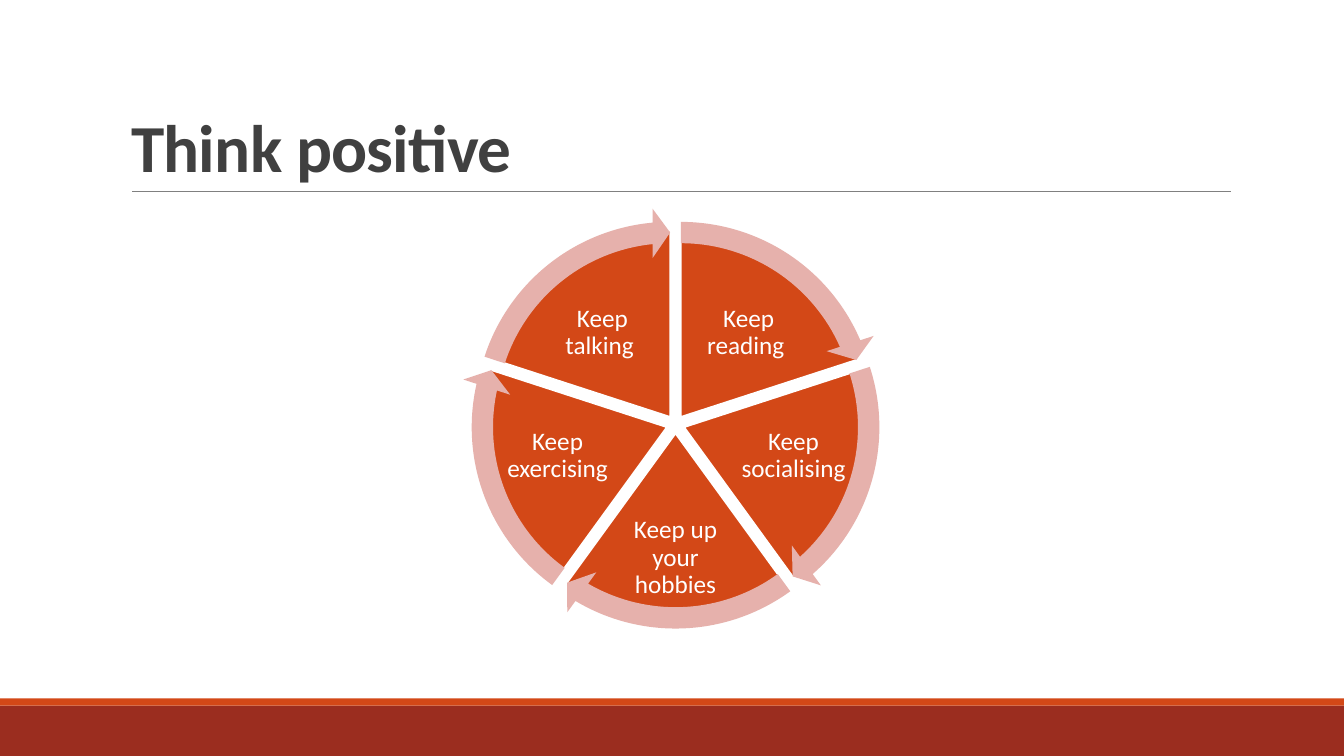
import math

from lxml import etree
from pptx import Presentation
from pptx import util as u
from pptx.dml.color import RGBColor
from pptx.enum import shapes, text
from pptx.oxml.ns import qn

ORANGE = RGBColor(0xD3, 0x48, 0x17)
BRICK = RGBColor(0x9B, 0x2D, 0x1F)
PINK = RGBColor(0xE6, 0xB1, 0xAC)
GREY = RGBColor(0x80, 0x80, 0x80)
DARK = RGBColor(0x40, 0x40, 0x40)
WHITE = RGBColor(0xFF, 0xFF, 0xFF)

CENTRE_X, CENTRE_Y, EXPLODE = 6.7, 4.21, 0.09
PIE_SIZE, ARROW_SIZE = 3.7, 4.15
FULL_TURN, TOP, STEP, SWEEP = 216, 162, 43.2, 39.92
LABELS = [
    ("Keep reading ", 6.83, 2.91, 1.19, 0.79),
    ("Keep socialising ", 7.32, 4.08, 1.1, 0.88),
    ("Keep up your hobbies", 6.17, 5.05, 1.06, 0.97),
    ("Keep exercising ", 4.98, 4.08, 1.1, 0.88),
    ("Keep talking ", 5.38, 2.91, 1.19, 0.79),
]


def set_attrs(obj, values):
    for name, value in values.items():
        setattr(obj, name, value)


def add_filled(s, kind, box, color, adjustments=(), outline=None):
    sp = s.shapes.add_shape(kind, *map(u.Inches, box))
    sp.shadow.inherit = False
    sp.fill.solid()
    sp.fill.fore_color.rgb = color
    if outline:
        sp.line.color.rgb = outline
        sp.line.width = u.Pt(1.25)
    else:
        sp.line.fill.background()
    for i, value in enumerate(adjustments):
        sp.adjustments[i] = value


def add_rule(s, x1, x2, y):
    line = s.shapes.add_connector(
        shapes.MSO_CONNECTOR.STRAIGHT, *map(u.Inches, (x1, y, x2, y)))
    line.line.color.rgb = GREY
    line.line.width = u.Pt(0.5)
    etree.SubElement(line._element.spPr, qn("a:effectLst"))


def write(sp, words, frame, paragraph, font, color):
    tf = sp.text_frame
    set_attrs(tf, {"word_wrap": True, "auto_size": text.MSO_AUTO_SIZE.NONE, **frame})
    p = tf.paragraphs[0]
    set_attrs(p, paragraph)
    r = p.add_run()
    r.text = words
    set_attrs(r.font, {"name": "Calibri", **font})
    r.font.color.rgb = color
    return r


def add_title(s, words):
    sp = s.shapes.title
    set_attrs(sp, dict(zip(("left", "top", "width", "height"),
                           map(u.Inches, (1.2, 0.31, 11, 1.59)))))
    r = write(sp, words, {"vertical_anchor": text.MSO_ANCHOR.BOTTOM},
              {"alignment": text.PP_ALIGN.LEFT, "line_spacing": 0.85},
              {"size": u.Pt(48), "bold": True}, DARK)
    r.font._element.set("spc", "-50")


def add_label(s, words, *box):
    sp = s.shapes.add_textbox(*map(u.Inches, box))
    margins = {f"margin_{side}": u.Inches(0.03)
               for side in ("left", "top", "right", "bottom")}
    write(sp, words, {"vertical_anchor": text.MSO_ANCHOR.MIDDLE, **margins},
          {"alignment": text.PP_ALIGN.CENTER, "line_spacing": 0.9},
          {"size": u.Pt(18)}, WHITE)


def sector(i, size):
    """Return the box and the start angle of one sector, moved out from the centre."""
    middle = math.radians(72 * i - 54)
    x = CENTRE_X + EXPLODE * math.cos(middle) - size / 2
    y = CENTRE_Y + EXPLODE * math.sin(middle) - size / 2
    return (x, y, size, size), (TOP + STEP * i) % FULL_TURN


def add_cycle(s):
    for i, label in enumerate(LABELS):
        box, start = sector(i, PIE_SIZE)
        add_filled(s, shapes.MSO_SHAPE.PIE, box, ORANGE,
                   (start, (start + STEP) % FULL_TURN), WHITE)
        add_label(s, *label)
    for i in range(len(LABELS)):
        box, start = sector(i, ARROW_SIZE)
        add_filled(s, shapes.MSO_SHAPE.CIRCULAR_ARROW, box, PINK,
                   (0.051, 3.275, (start + SWEEP) % FULL_TURN, start, 0.059))


def main():
    prs = Presentation()
    set_attrs(prs, {"slide_width": u.Inches(13.33), "slide_height": u.Inches(7.5)})
    s = prs.slides.add_slide(prs.slide_layouts[5])
    add_filled(s, shapes.MSO_SHAPE.RECTANGLE, (0, 7, 13.33, 0.5), BRICK)
    add_filled(s, shapes.MSO_SHAPE.RECTANGLE, (0, 6.93, 13.33, 0.07), ORANGE)
    add_rule(s, 1.31, 12.21, 1.9)
    add_title(s, "Think positive")
    add_cycle(s)
    prs.save("out.pptx")


if __name__ == "__main__":
    main()
